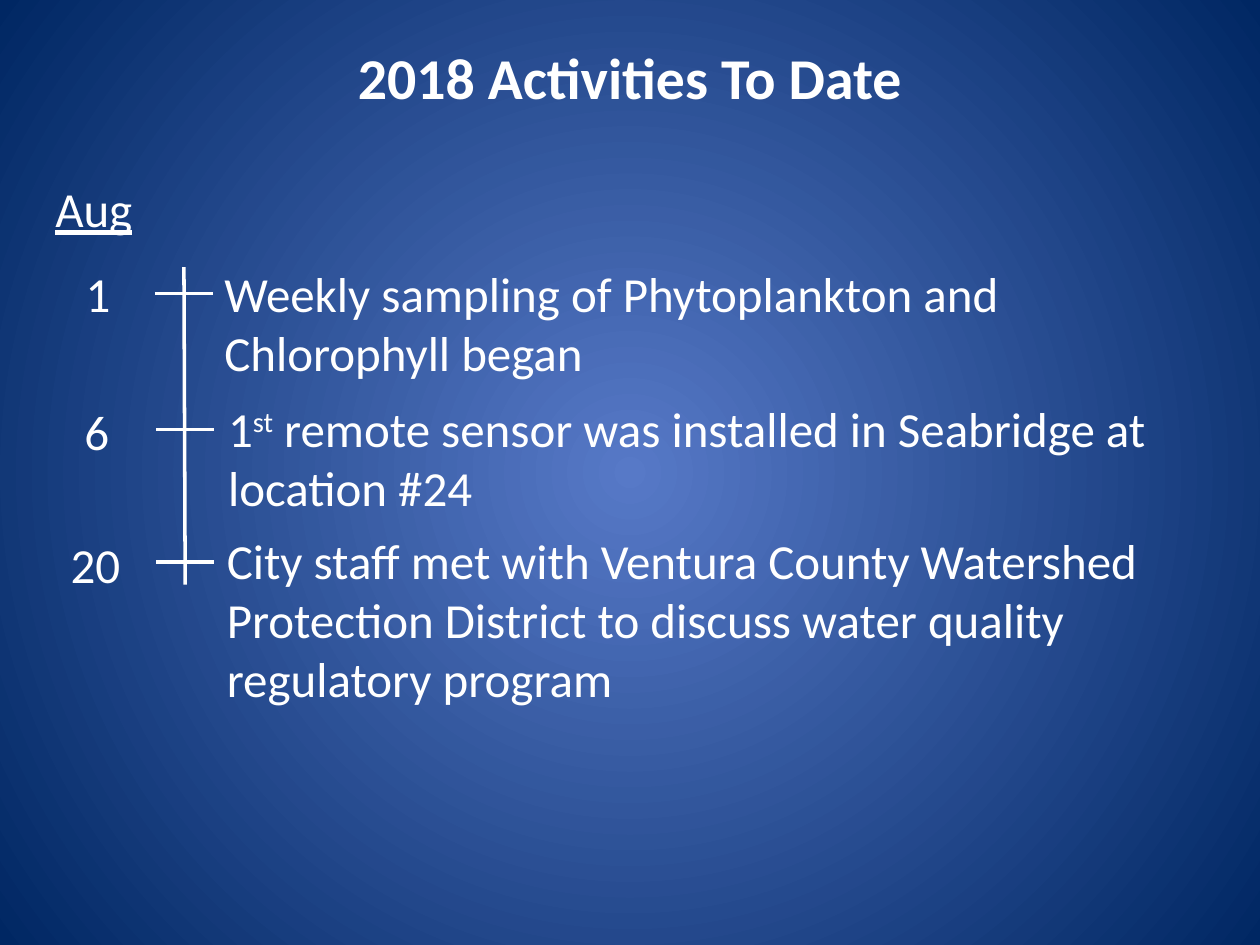
from lxml.etree import SubElement
from pptx import Presentation
from pptx.dml.color import RGBColor
from pptx.enum.shapes import MSO_CONNECTOR
from pptx.enum.text import MSO_ANCHOR, PP_ALIGN
from pptx.oxml import parse_xml
from pptx.oxml.ns import nsdecls, qn
from pptx.util import Inches, Pt

FONT = "Calibri"
WHITE = "FFFFFF"
TEXT_W = 7.82
TICK_W = 0.46

# day, day left, day top, tick left, tick y, text left, text top, text height, runs
EVENTS = [
    ("1", 0.64, 2.05, 1.23, 2.33, 1.74, 2.05, 1.07,
     ["Weekly sampling of Phytoplankton and Chlorophyll began"]),
    ("6", 0.63, 3.15, 1.24, 3.41, 1.77, 3.12, 0.85,
     ["1", ("st", 30), " remote sensor was installed in Seabridge at location #24"]),
    ("20", 0.52, 4.2, 1.24, 4.46, 1.76, 4.17, 1.76,
     ["City staff met with Ventura County Watershed Protection District "
      "to discuss water quality regulatory program"]),
]


def rgb(value):
    return RGBColor.from_string(value)


def write(tf, runs, size=28, bold=False, underline=False, align=PP_ALIGN.LEFT,
          anchor=MSO_ANCHOR.TOP, inset=(0.04, 0.04)):
    """Fill a text frame; a run is a string or a (string, superscript percent) pair."""
    tf.word_wrap = True
    tf.vertical_anchor = anchor
    tf.margin_left = tf.margin_right = Inches(inset[0])
    tf.margin_top = tf.margin_bottom = Inches(inset[1])
    p = tf.paragraphs[0]
    p.alignment = align
    for run in runs:
        text, raised = (run, 0) if isinstance(run, str) else run
        r = p.add_run()
        r.text = text
        r.font.name = FONT
        r.font.size = Pt(size)
        r.font.bold = bold
        r.font.underline = underline
        r.font.color.rgb = rgb(WHITE)
        if raised:
            r._r.get_or_add_rPr().set("baseline", str(raised * 1000))


def add_text(s, box, runs, **fmt):
    sp = s.shapes.add_textbox(*map(Inches, box))
    write(sp.text_frame, runs, **fmt)


def add_line(s, x1, y1, x2, y2):
    line = s.shapes.add_connector(MSO_CONNECTOR.STRAIGHT, *map(Inches, (x1, y1, x2, y2)))
    line.line.color.rgb = rgb(WHITE)
    line.line.width = Pt(2)
    SubElement(line._element.spPr, qn("a:effectLst"))


def set_radial_background(s, inner, outer):
    fill = s.background.fill
    fill.gradient()
    for stop, color in zip(fill.gradient_stops, (inner, outer)):
        stop.color.rgb = rgb(color)
    grad = s.element.find(".//" + qn("a:gradFill"))
    radial = parse_xml(
        f'<a:path {nsdecls("a")} path="circle">'
        '<a:fillToRect l="50000" t="50000" r="50000" b="50000"/></a:path>')
    grad.replace(grad.find(qn("a:lin")), radial)


def add_title(s, text):
    title = s.shapes.title
    title.left, title.top, title.width, title.height = map(Inches, (0.5, 0.28, 9, 0.65))
    write(title.text_frame, [text], size=33, bold=True, align=PP_ALIGN.CENTER,
          anchor=MSO_ANCHOR.MIDDLE, inset=(0.1, 0.05))


def add_event(s, day, day_x, day_y, tick_x, tick_y, text_x, text_y, text_h, runs):
    add_text(s, (day_x, day_y, 0.5, 0.39), [day])
    add_line(s, tick_x, tick_y, tick_x + TICK_W, tick_y)
    add_text(s, (text_x, text_y, TEXT_W, text_h), runs)


def main():
    prs = Presentation()
    prs.slide_width, prs.slide_height = Inches(10), Inches(7.5)
    s = prs.slides.add_slide(prs.slide_layouts[5])
    set_radial_background(s, "5779C7", "002763")
    add_title(s, "2018 Activities To Date")
    add_text(s, (0.34, 1.37, 1.12, 0.57), ["Aug"], underline=True, inset=(0.1, 0.05))
    add_line(s, 1.46, 2.12, 1.47, 4.64)
    for event in EVENTS:
        add_event(s, *event)
    prs.save("out.pptx")


if __name__ == "__main__":
    main()
